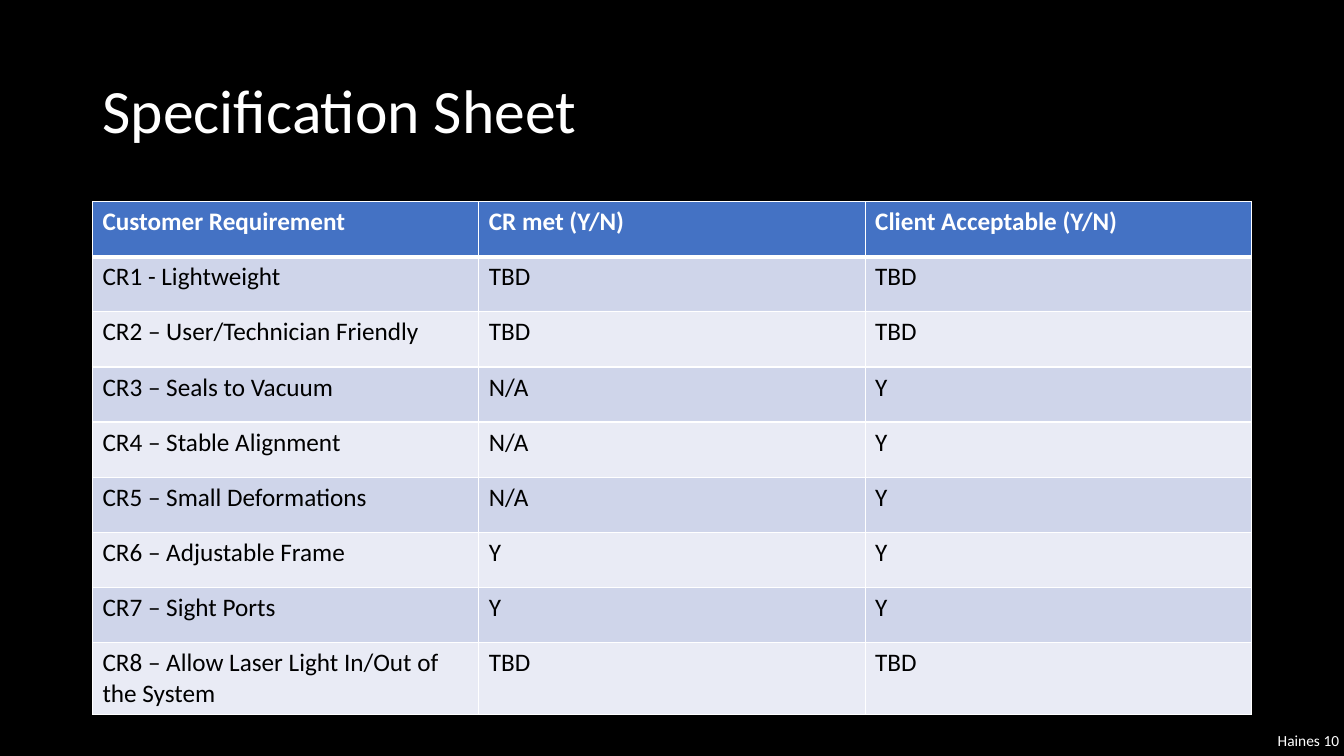
from lxml import etree
from pptx import Presentation
from pptx.dml.color import RGBColor
from pptx.enum.text import MSO_ANCHOR, PP_ALIGN
from pptx.oxml.ns import qn
from pptx.util import Cm, Pt

TITLE = "Specification Sheet"
FOOTER = "Haines\u00a010".replace("\u00a0", " ")
HEADER = ("Customer Requirement", "CR met (Y/N)", "Client Acceptable (Y/N)")
REQUIREMENTS = [
    ("CR1 - Lightweight", "TBD", "TBD"),
    ("CR2 – User/Technician Friendly", "TBD", "TBD"),
    ("CR3 – Seals to Vacuum", "N/A", "Y"),
    ("CR4 – Stable Alignment", "N/A", "Y"),
    ("CR5 – Small Deformations", "N/A", "Y"),
    ("CR6 – Adjustable Frame", "Y", "Y"),
    ("CR7 – Sight Ports", "Y", "Y"),
    ("CR8 – Allow Laser Light In/Out of the System", "TBD", "TBD"),
]

FONT = "Calibri"
BLACK = RGBColor(0x00, 0x00, 0x00)
WHITE = RGBColor(0xFF, 0xFF, 0xFF)
BLUE = RGBColor(0x44, 0x72, 0xC4)
BANDS = (RGBColor(0xCF, 0xD5, 0xEA), RGBColor(0xE9, 0xEB, 0xF5))
MIDDLE = MSO_ANCHOR.MIDDLE
LEFT = PP_ALIGN.LEFT

MARGIN, CONTENT_WIDTH = Cm(2.33), Cm(29.21)
TABLE_TOP, ROW_HEIGHT = Cm(5.08), Cm(1.39)


def write(frame, text, size, color=WHITE, bold=False, line_spacing=None):
    para = frame.paragraphs[0]
    para.alignment = LEFT
    para.line_spacing = line_spacing
    span = para.add_run()
    span.text = text
    font = span.font
    font.name, font.size, font.bold = FONT, Pt(size), bold
    font.color.rgb = color


def add_borders(cell, **widths):
    """Draw white cell borders; widths in points for L, R, T and B."""
    properties = cell._tc.get_or_add_tcPr()
    for side in "LRTB":
        line = etree.SubElement(properties, qn(f"a:ln{side}"),
                                w=str(Pt(widths.get(side, 1))))
        fill = etree.SubElement(line, qn("a:solidFill"))
        etree.SubElement(fill, qn("a:srgbClr"), val=str(WHITE))


def add_requirements_table(page):
    rows = [HEADER, *REQUIREMENTS]
    table = page.shapes.add_table(len(rows), len(HEADER), MARGIN, TABLE_TOP,
                                  CONTENT_WIDTH, ROW_HEIGHT * len(rows)).table
    for row_index, texts in enumerate(rows):
        is_header = row_index == 0
        for column_index, text in enumerate(texts):
            cell = table.cell(row_index, column_index)
            write(cell.text_frame, text, 18,
                  color=WHITE if is_header else BLACK, bold=is_header)
            add_borders(cell, T=3 if row_index == 1 else 1,
                        B=3 if is_header else 1)
            cell.fill.solid()
            cell.fill.fore_color.rgb = (
                BLUE if is_header else BANDS[(row_index - 1) % 2])


def main():
    deck = Presentation()
    deck.slide_width, deck.slide_height = Cm(33.87), Cm(19.05)
    page = deck.slides.add_slide(deck.slide_layouts[5])
    page.background.fill.solid()
    page.background.fill.fore_color.rgb = BLACK

    title = page.shapes.title
    title.left, title.top = MARGIN, Cm(1.01)
    title.width, title.height = CONTENT_WIDTH, Cm(3.68)
    title.text_frame.vertical_anchor = MIDDLE
    write(title.text_frame, TITLE, 44, line_spacing=0.9)

    add_requirements_table(page)

    footer = page.shapes.add_textbox(Cm(31.95), Cm(18.31), Cm(3.33), Cm(0.74))
    footer.text_frame.word_wrap = True
    write(footer.text_frame, FOOTER, 11)

    deck.save("out.pptx")


if __name__ == "__main__":
    main()
